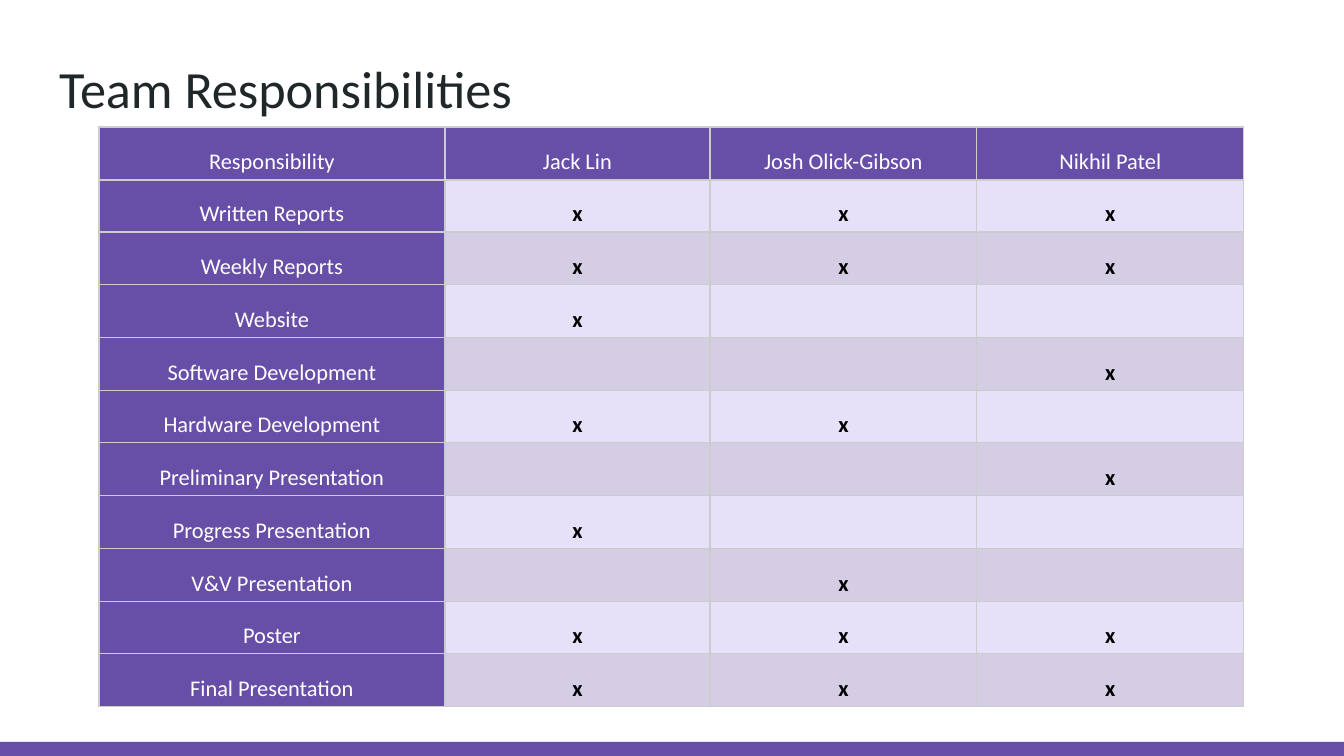
"""Build the team responsibilities slide."""
from lxml import etree
from pptx import Presentation, util as u
from pptx.dml.color import RGBColor
from pptx.enum import shapes, text
from pptx.oxml.ns import qn

PX = 914400 / 134.4
THEME = {
    "font": "Calibri", "title_pt": 28, "cell_pt": 12,
    "ink": "202729", "mark": "000000", "white": "FFFFFF",
    "purple": "674EA7", "bands": ("E7E0F9", "D4CDE4"), "border": "CCCCCC",
}


def px(n):
    return u.Emu(round(n * PX))


def add_run(p, words, size, color, bold=False):
    r = p.add_run()
    r.text = words
    r.font.name = THEME["font"]
    r.font.size = u.Pt(size)
    r.font.bold = bold
    r.font.color.rgb = RGBColor.from_string(color)


members = ["Jack Lin", "Josh Olick-Gibson", "Nikhil Patel"]
duties = [
    ("Written Reports", "xxx"),
    ("Weekly Reports", "xxx"),
    ("Website", "x--"),
    ("Software Development", "--x"),
    ("Hardware Development", "xx-"),
    ("Preliminary Presentation", "--x"),
    ("Progress Presentation", "x--"),
    ("V&V Presentation", "-x-"),
    ("Poster", "xxx"),
    ("Final Presentation", "xxx"),
]
rows = [["Responsibility", *members]]
rows += [[duty, *marks.replace("-", " ")] for duty, marks in duties]

prs = Presentation()
prs.slide_width, prs.slide_height = px(1344), px(756)
s = prs.slides.add_slide(prs.slide_layouts[6])

bar = s.shapes.add_shape(shapes.MSO_SHAPE.RECTANGLE, 0, px(742), px(1344), px(14))
bar.shadow.inherit = False
bar.fill.solid()
bar.fill.fore_color.rgb = RGBColor.from_string(THEME["purple"])
bar.line.fill.background()

title = s.shapes.add_textbox(px(46), px(43), px(1252), px(84))
tf = title.text_frame
tf.word_wrap = True
tf.margin_left = tf.margin_right = tf.margin_top = tf.margin_bottom = u.Inches(0.1)
add_run(tf.paragraphs[0], "Team Responsibilities", THEME["title_pt"], THEME["ink"])

widths = [346, 265, 267, 267]
top, height = 127, 580
edges = [round(height * i / len(rows)) for i in range(len(rows) + 1)]
frame = s.shapes.add_table(len(rows), len(widths), px(99), px(top), px(sum(widths)), px(height))
table = frame.table
for column, width in zip(table.columns, widths):
    column.width = px(width)

for i, row in enumerate(rows):
    table.rows[i].height = px(edges[i + 1] - edges[i])
    for j, words in enumerate(row):
        heading = i == 0 or j == 0
        cell = table.cell(i, j)
        cell.margin_left = cell.margin_right = px(4)
        cell.margin_top = cell.margin_bottom = px(4)
        cell.vertical_anchor = text.MSO_ANCHOR.BOTTOM
        tc_pr = cell._tc.get_or_add_tcPr()
        for side in ("a:lnL", "a:lnR", "a:lnT", "a:lnB"):
            ln = etree.SubElement(tc_pr, qn(side), w=str(u.Pt(0.75)))
            paint = etree.SubElement(ln, qn("a:solidFill"))
            etree.SubElement(paint, qn("a:srgbClr"), val=THEME["border"])
        cell.fill.solid()
        fill = THEME["purple"] if heading else THEME["bands"][(i - 1) % 2]
        cell.fill.fore_color.rgb = RGBColor.from_string(fill)
        if words.strip():
            p = cell.text_frame.paragraphs[0]
            p.alignment = text.PP_ALIGN.CENTER
            p.line_spacing = 1.5
            p.space_before = u.Pt(4)
            color = THEME["white"] if heading else THEME["mark"]
            add_run(p, words, THEME["cell_pt"], color, not heading)

prs.save("out.pptx")
